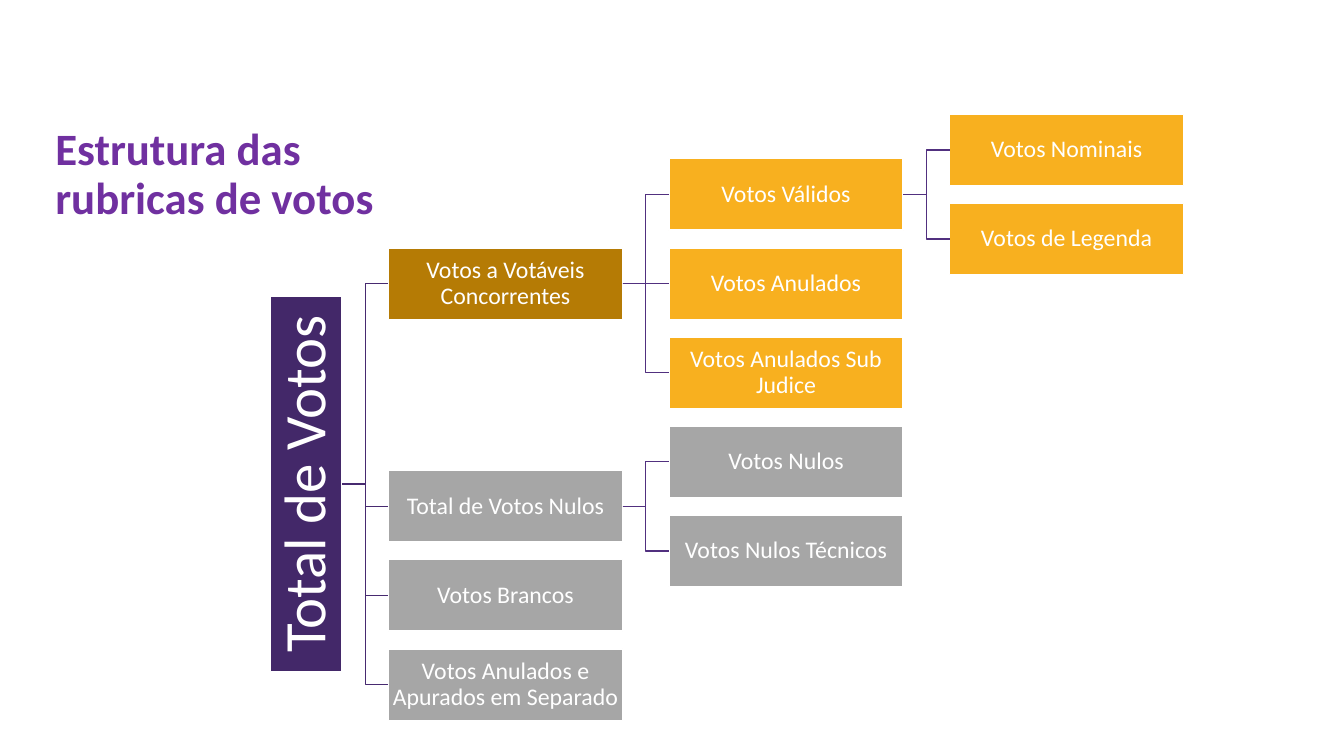
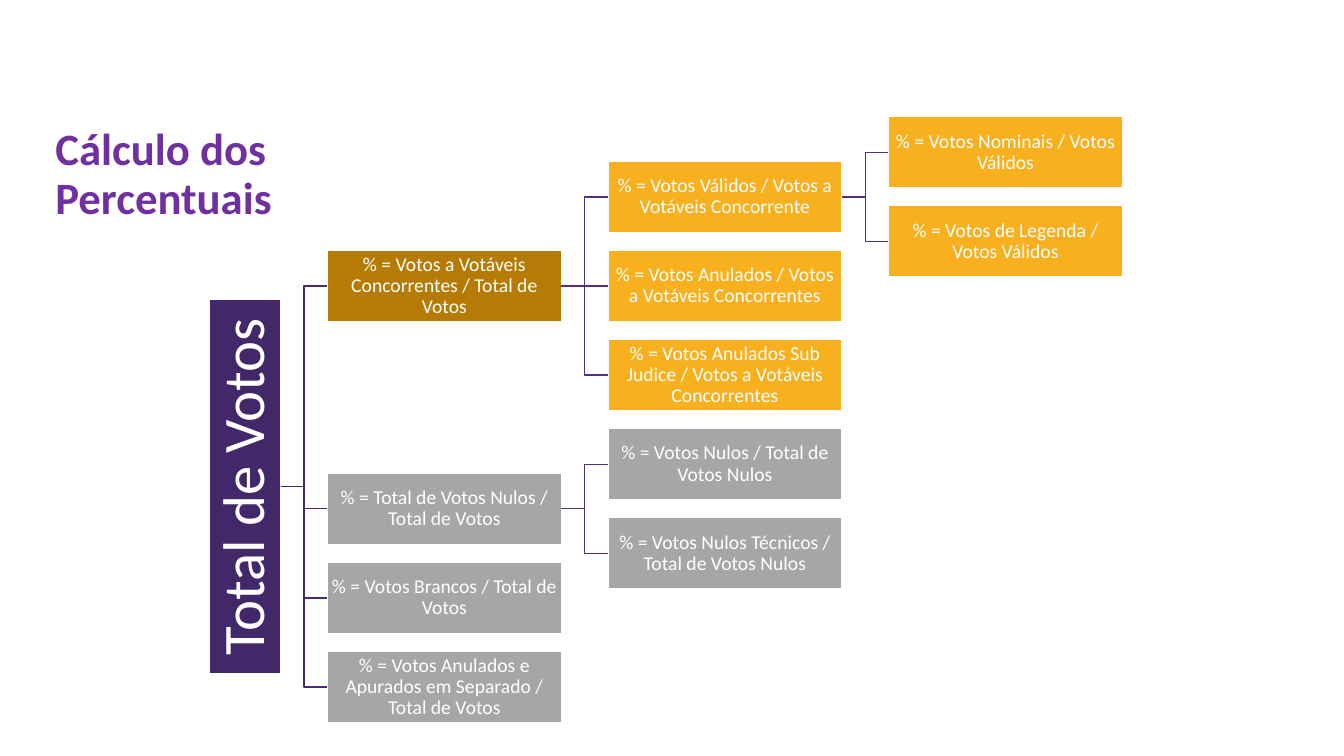
"""Build two slides with the tree of vote categories and its percentages."""
from lxml.etree import SubElement
from pptx import Presentation
from pptx.dml.color import RGBColor
from pptx.enum.shapes import MSO_CONNECTOR, MSO_SHAPE
from pptx.enum.text import MSO_ANCHOR, MSO_AUTO_SIZE, PP_ALIGN
from pptx.oxml.ns import qn
from pptx.util import Cm, Pt

FONT = "Calibri"
WHITE, TITLE_PURPLE, ROOT_PURPLE = "FFFFFF", "7030A0", "432869"
BROWN, YELLOW, GREY = "B57B05", "F8B01F", "A6A6A6"
ROOT_BRANCH, INNER_BRANCH = "472A70", "51307F"

BOX_WIDTH, BOX_HEIGHT, COLUMN_GAP, ROW_STEP = 5.9, 1.8, 1.17, 2.245
ROOT_LENGTH, ROOT_ROW = 9.45, 3.75

CATEGORIES = [
    ("votaveis", "root", 0, 1.5, BROWN),
    ("validos", "votaveis", 1, 0.5, YELLOW),
    ("nominais", "validos", 2, 0, YELLOW),
    ("legenda", "validos", 2, 1, YELLOW),
    ("anulados", "votaveis", 1, 1.5, YELLOW),
    ("sub_judice", "votaveis", 1, 2.5, YELLOW),
    ("total_nulos", "root", 0, 4, GREY),
    ("nulos", "total_nulos", 1, 3.5, GREY),
    ("tecnicos", "total_nulos", 1, 4.5, GREY),
    ("brancos", "root", 0, 5, GREY),
    ("separado", "root", 0, 6, GREY),
]

NAMES = [
    "Votos a Votáveis Concorrentes",
    "Votos Válidos",
    "Votos Nominais",
    "Votos de Legenda",
    "Votos Anulados",
    "Votos Anulados Sub Judice",
    "Total de Votos Nulos",
    "Votos Nulos",
    "Votos Nulos Técnicos",
    "Votos Brancos",
    "Votos Anulados e Apurados em Separado",
]

FORMULAS = [
    "% = Votos a Votáveis Concorrentes / Total de Votos",
    "% = Votos Válidos / Votos a Votáveis Concorrente",
    "% = Votos Nominais / Votos Válidos",
    "% = Votos de Legenda / Votos Válidos",
    "% = Votos Anulados / Votos a Votáveis Concorrentes",
    "% = Votos Anulados Sub Judice / Votos a Votáveis Concorrentes",
    "% = Total de Votos Nulos / Total de Votos",
    "% = Votos Nulos / Total de Votos Nulos",
    "% = Votos Nulos Técnicos / Total de Votos Nulos",
    "% = Votos Brancos / Total de Votos",
    "% = Votos Anulados e Apurados em Separado / Total de Votos",
]

TREES = [
    ("Estrutura das rubricas de votos", NAMES, 17, 6.82, 3.78),
    ("Cálculo dos Percentuais", FORMULAS, 14, 5.28, 3.84),
]


def color(hex_string):
    return RGBColor.from_string(hex_string)


def add_box(slide, center_x, center_y, width, fill, label, size, inset):
    box = slide.shapes.add_shape(
        MSO_SHAPE.RECTANGLE, Cm(center_x - width / 2), Cm(center_y - BOX_HEIGHT / 2),
        Cm(width), Cm(BOX_HEIGHT))
    box.shadow.inherit = False
    box.fill.solid()
    box.fill.fore_color.rgb = color(fill)
    box.line.color.rgb = color(WHITE)
    box.line.width = Pt(1)
    frame = box.text_frame
    frame.word_wrap = True
    frame.vertical_anchor = MSO_ANCHOR.MIDDLE
    frame.margin_left = frame.margin_right = Cm(inset)
    frame.margin_top = frame.margin_bottom = Cm(inset)
    frame.text = label
    paragraph = frame.paragraphs[0]
    paragraph.alignment = PP_ALIGN.CENTER
    paragraph.line_spacing = 0.9
    paragraph.font.name = FONT
    paragraph.font.size = Pt(size)
    paragraph.font.color.rgb = color(WHITE)
    return box


deck = Presentation()
deck.slide_width, deck.slide_height = Cm(33.87), Cm(19.05)
title_only = deck.slide_layouts.get_by_name("Title Only")
layout_title = title_only.placeholders[0]
layout_title.left, layout_title.top = Cm(1.14), Cm(3.2)
layout_title.width, layout_title.height = Cm(9.12), Cm(2.44)

for heading, labels, label_size, tree_left, first_row in TREES:
    slide = deck.slides.add_slide(title_only)
    title = slide.shapes.title.text_frame
    title.text = heading
    title.word_wrap = True
    title.auto_size = MSO_AUTO_SIZE.NONE
    title.vertical_anchor = MSO_ANCHOR.MIDDLE
    heading_line = title.paragraphs[0]
    heading_line.alignment = PP_ALIGN.LEFT
    heading_line.line_spacing = 0.9
    heading_line.font.name = FONT
    heading_line.font.size = Pt(32)
    heading_line.font.bold = True
    heading_line.font.color.rgb = color(TITLE_PURPLE)

    root_x = tree_left + BOX_HEIGHT / 2
    root_y = first_row + ROOT_ROW * ROW_STEP
    root = add_box(slide, root_x, root_y, ROOT_LENGTH, ROOT_PURPLE,
                   "Total de Votos", 42, 0.07)
    root.rotation = 270
    boxes = {"root": root}
    right_edges = {"root": (tree_left + BOX_HEIGHT, root_y)}

    for (category, parent, column, row, fill), label in zip(CATEGORIES, labels):
        left = tree_left + BOX_HEIGHT + COLUMN_GAP + column * (BOX_WIDTH + COLUMN_GAP)
        middle = first_row + row * ROW_STEP
        boxes[category] = add_box(slide, left + BOX_WIDTH / 2, middle, BOX_WIDTH,
                                  fill, label, label_size, 0.03)
        right_edges[category] = (left + BOX_WIDTH, middle)

        start_x, start_y = right_edges[parent]
        branch = slide.shapes.add_connector(
            MSO_CONNECTOR.ELBOW, Cm(start_x), Cm(start_y), Cm(left), Cm(middle))
        branch.begin_connect(boxes[parent], 2 if parent == "root" else 3)
        branch.end_connect(boxes[category], 1)
        branch.begin_x, branch.begin_y = Cm(start_x), Cm(start_y)
        branch.line.color.rgb = color(ROOT_BRANCH if parent == "root" else INNER_BRANCH)
        branch.line.width = Pt(1)
        SubElement(branch._element.spPr, qn("a:effectLst"))

deck.save("out.pptx")
